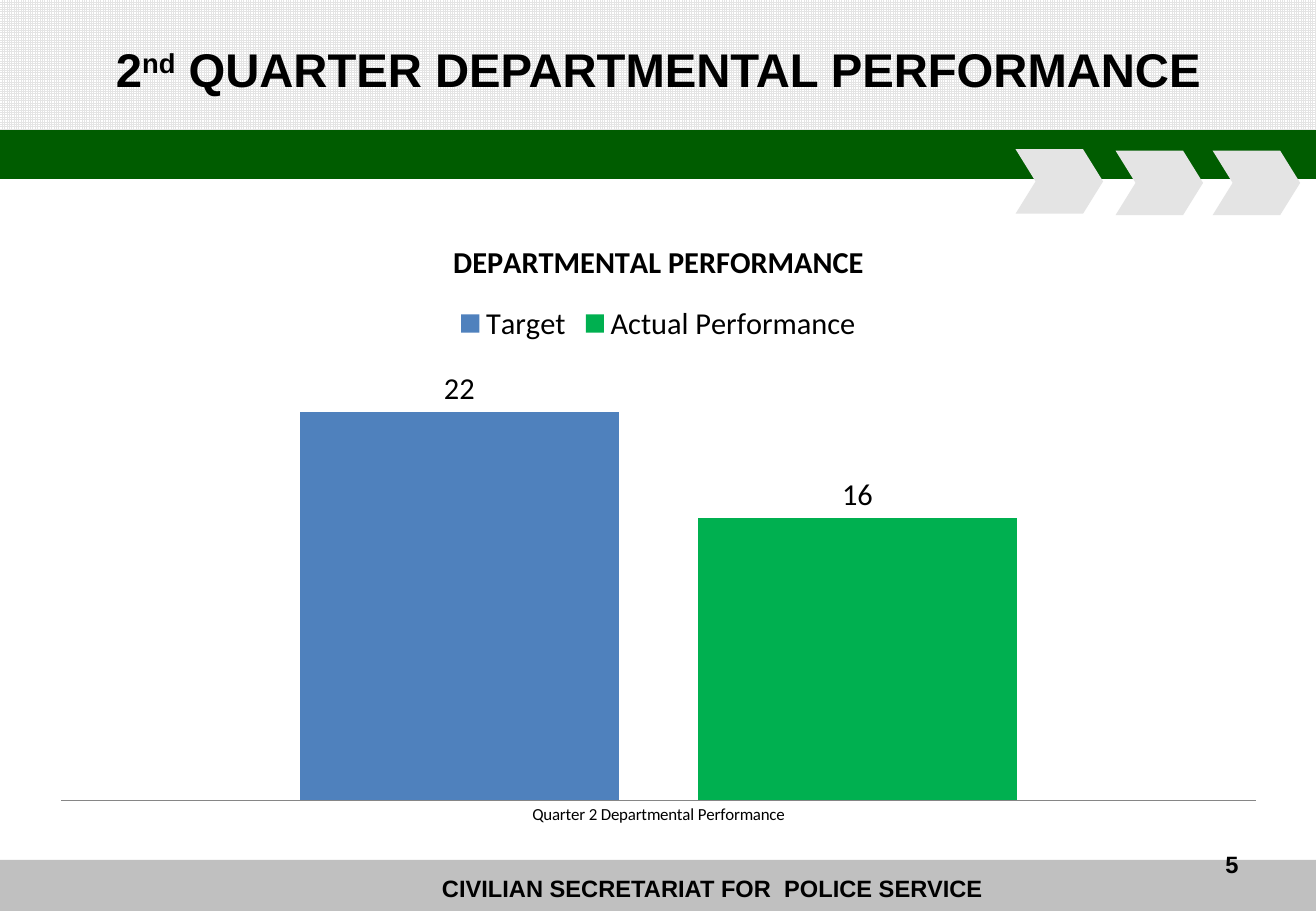
"""Build the second quarter departmental performance slide."""
import pptx
import pptx.chart.data
import pptx.dml.color
import pptx.enum.chart
import pptx.enum.dml
import pptx.enum.shapes
import pptx.enum.text
import pptx.oxml
import pptx.util
from pptx.util import Cm

RGBColor = pptx.dml.color.RGBColor
MSO_SHAPE = pptx.enum.shapes.MSO_SHAPE
PP_ALIGN = pptx.enum.text.PP_ALIGN
MSO_ANCHOR = pptx.enum.text.MSO_ANCHOR

BLACK = RGBColor(0x00, 0x00, 0x00)
WHITE = RGBColor(0xFF, 0xFF, 0xFF)
SILVER = RGBColor(0xC0, 0xC0, 0xC0)
PALE = RGBColor(0xE4, 0xE4, 0xE4)
DARK_GREEN = RGBColor(0x00, 0x5C, 0x00)
AXIS_GREY = RGBColor(0x86, 0x86, 0x86)
BLUE = RGBColor(0x4F, 0x81, 0xBD)
GREEN = RGBColor(0x00, 0xB0, 0x50)

SLIDE_W, SLIDE_H = 27.51, 19.05
HEADER_H = 2.72


def add_block(kind, left, top, width, height, color):
    sp = slide.shapes.add_shape(kind, Cm(left), Cm(top), Cm(width), Cm(height))
    sp.shadow.inherit = False
    sp.fill.solid()
    sp.fill.fore_color.rgb = color
    sp.line.fill.background()
    return sp


def add_text(left, top, width, height, runs, size, align, anchor, wrap=True):
    tf = slide.shapes.add_textbox(Cm(left), Cm(top), Cm(width), Cm(height)).text_frame
    tf.word_wrap = wrap
    tf.vertical_anchor = anchor
    p = tf.paragraphs[0]
    p.alignment = align
    for text, baseline in runs:
        r = p.add_run()
        r.text = text
        r.font.name = "Arial"
        r.font.size = pptx.util.Pt(size)
        r.font.bold = True
        r.font.color.rgb = BLACK
        if baseline:
            r.font._element.set("baseline", str(baseline * 1000))


prs = pptx.Presentation()
prs.slide_width, prs.slide_height = Cm(SLIDE_W), Cm(SLIDE_H)
slide = prs.slides.add_slide(prs.slide_layouts[6])

add_block(MSO_SHAPE.RECTANGLE, 0, 17.98, SLIDE_W, 1.07, SILVER)
add_block(MSO_SHAPE.RECTANGLE, 0, HEADER_H, SLIDE_W, 1.02, DARK_GREEN)
for left, top in ((21.23, 3.12), (23.32, 3.15), (25.35, 3.15)):
    chevron = add_block(MSO_SHAPE.CHEVRON, left, top, 1.83, 1.35, PALE)
    chevron.adjustments[0] = 0.31

header = add_block(MSO_SHAPE.RECTANGLE, 0, 0, SLIDE_W, HEADER_H, WHITE)
header.fill.patterned()
header.fill.pattern = pptx.enum.dml.MSO_PATTERN.SMALL_GRID
header.fill.fore_color.rgb = PALE
header.fill.back_color.rgb = WHITE

add_text(8.99, 18.14, 11.99, 0.86, [("CIVILIAN SECRETARIAT FOR  POLICE SERVICE", 0)],
         14, PP_ALIGN.LEFT, MSO_ANCHOR.TOP, wrap=False)
add_text(19.71, 17.65, 6.43, 1.02, [("5", 0)], 14, PP_ALIGN.RIGHT, MSO_ANCHOR.TOP)
add_text(0.36, 0.66, 26.8, 1.57,
         [("2", 0), ("nd", 30), (" QUARTER DEPARTMENTAL PERFORMANCE", 0)],
         28, PP_ALIGN.CENTER, MSO_ANCHOR.MIDDLE)

data = pptx.chart.data.CategoryChartData()
data.categories = ["Quarter 2 Departmental Performance"]
data.add_series("Target", [22])
data.add_series("Actual Performance", [16])
chart = slide.shapes.add_chart(
    pptx.enum.chart.XL_CHART_TYPE.COLUMN_CLUSTERED,
    Cm(0.76), Cm(4.52), Cm(26.01), Cm(13), data).chart
chart.font.name = "Calibri"
chart.font.size = pptx.util.Pt(10)
chart.font.color.rgb = BLACK

r = chart.chart_title.text_frame.paragraphs[0].add_run()
r.text = "DEPARTMENTAL PERFORMANCE"
r.font.name = "Calibri"
r.font.size = pptx.util.Pt(18)
r.font.bold = True
r.font.color.rgb = BLACK

chart.has_legend = True
chart.legend.position = pptx.enum.chart.XL_LEGEND_POSITION.TOP
chart.legend.include_in_layout = False
chart.legend.font.size = pptx.util.Pt(18)

chart.value_axis.visible = False
chart.value_axis.has_major_gridlines = False
chart.value_axis.minimum_scale = 0
chart.value_axis.maximum_scale = 25
chart.category_axis.major_tick_mark = pptx.enum.chart.XL_TICK_MARK.NONE
chart.category_axis.format.line.color.rgb = AXIS_GREY

plot = chart.plots[0]
plot.vary_by_categories = False
plot.gap_width = 150
plot.overlap = -25
for series, color in zip(plot.series, (BLUE, GREEN)):
    series.format.fill.solid()
    series.format.fill.fore_color.rgb = color
    labels = series.data_labels
    labels.show_value = True
    labels.position = pptx.enum.chart.XL_LABEL_POSITION.OUTSIDE_END
    labels.font.size = pptx.util.Pt(18)

plot_area = chart._chartSpace.chart.plotArea
for old in plot_area.xpath("c:layout"):
    plot_area.remove(old)
plot_area.insert(0, pptx.oxml.parse_xml(
    '<c:layout xmlns:c="http://schemas.openxmlformats.org/drawingml/2006/chart">'
    '<c:manualLayout><c:layoutTarget val="inner"/>'
    '<c:xMode val="edge"/><c:yMode val="edge"/>'
    '<c:x val="0.02"/><c:y val="0.23"/><c:w val="0.96"/><c:h val="0.71"/>'
    '</c:manualLayout></c:layout>'))

prs.save("out.pptx")
